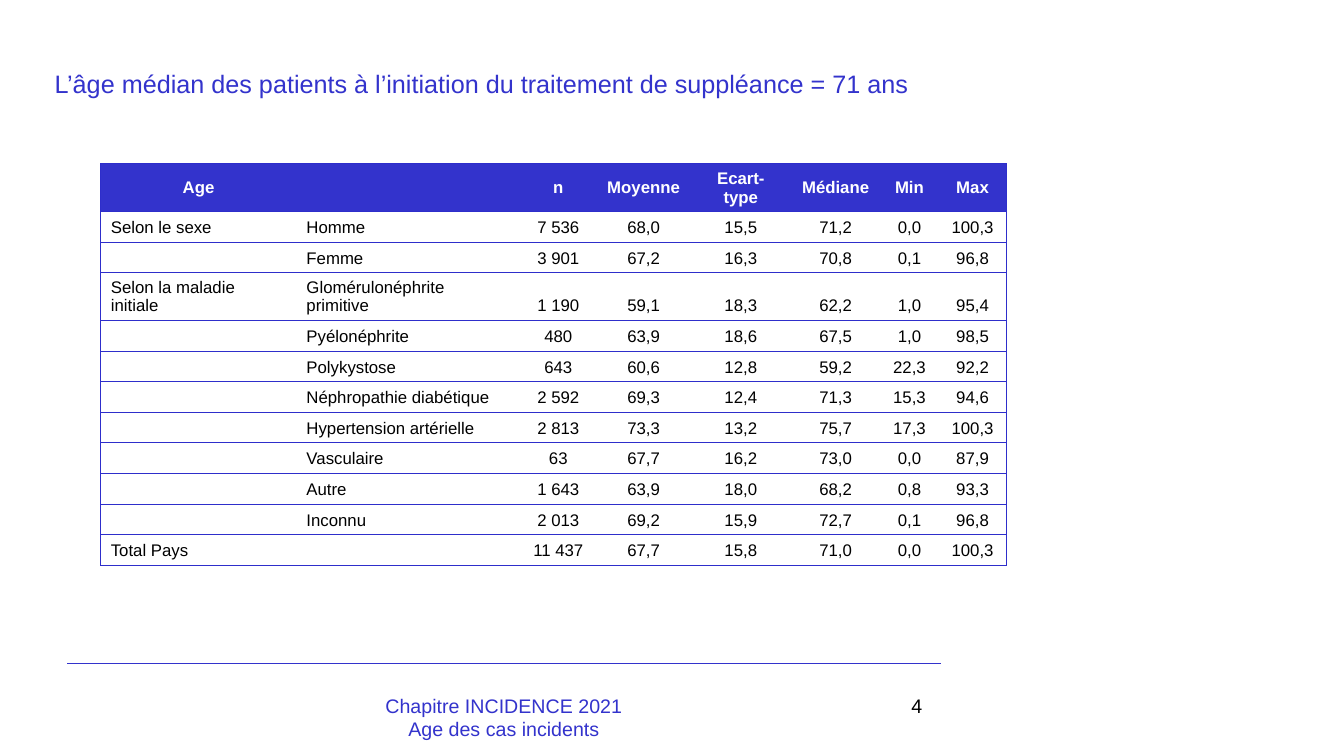
"""Build the slide on the age of incident patients: title, table and footer."""
from pptx import Presentation
from pptx.dml.color import RGBColor
from pptx.enum.shapes import MSO_CONNECTOR
from pptx.enum.text import MSO_ANCHOR, PP_ALIGN
from pptx.oxml import parse_xml
from pptx.oxml.ns import nsdecls
from pptx.util import Cm, Pt

BLUE = RGBColor(0x33, 0x33, 0xCC)
BORDER = RGBColor(0x2E, 0x2E, 0xCB)
WHITE = RGBColor(0xFF, 0xFF, 0xFF)
BLACK = RGBColor(0, 0, 0)
LEFT, CENTER, RIGHT = PP_ALIGN.LEFT, PP_ALIGN.CENTER, PP_ALIGN.RIGHT
JUSTIFY = PP_ALIGN.JUSTIFY
TOP, MIDDLE, BOTTOM = MSO_ANCHOR.TOP, MSO_ANCHOR.MIDDLE, MSO_ANCHOR.BOTTOM
STRAIGHT = MSO_CONNECTOR.STRAIGHT

COLUMN_WIDTHS = [4.93, 5.63, 1.94, 2.36, 2.54, 2.24, 1.48, 1.7]
ROW_HEIGHT = 0.77
ROWS = [
    ["Age", "", "n", "Moyenne", "Ecart-type", "Médiane", "Min", "Max"],
    ["Selon le sexe", "Homme", "7 536", "68,0", "15,5", "71,2", "0,0", "100,3"],
    ["", "Femme", "3 901", "67,2", "16,3", "70,8", "0,1", "96,8"],
    ["Selon la maladie initiale", "Glomérulonéphrite primitive",
     "1 190", "59,1", "18,3", "62,2", "1,0", "95,4"],
    ["", "Pyélonéphrite", "480", "63,9", "18,6", "67,5", "1,0", "98,5"],
    ["", "Polykystose", "643", "60,6", "12,8", "59,2", "22,3", "92,2"],
    ["", "Néphropathie diabétique", "2 592", "69,3", "12,4", "71,3", "15,3", "94,6"],
    ["", "Hypertension artérielle", "2 813", "73,3", "13,2", "75,7", "17,3", "100,3"],
    ["", "Vasculaire", "63", "67,7", "16,2", "73,0", "0,0", "87,9"],
    ["", "Autre", "1 643", "63,9", "18,0", "68,2", "0,8", "93,3"],
    ["", "Inconnu", "2 013", "69,2", "15,9", "72,7", "0,1", "96,8"],
    ["Total Pays", "", "11 437", "67,7", "15,8", "71,0", "0,0", "100,3"],
]


def write_text(text_frame, text, alignment, font_format):
    text_frame.text = text
    for paragraph in text_frame.paragraphs:
        paragraph.alignment = alignment
        for run in paragraph.runs:
            run.font.name = "Arial"
            run.font.color.rgb = font_format["color"]
            for name in ("size", "bold"):
                setattr(run.font, name, font_format[name])


def add_border(cell, side, visible):
    fill = f'<a:solidFill><a:srgbClr val="{BORDER}"/></a:solidFill>' if visible else "<a:noFill/>"
    cell_properties = cell._tc.get_or_add_tcPr()
    cell_properties.append(parse_xml(
        f'<a:ln{side} {nsdecls("a")} w="{Pt(0.75)}">{fill}</a:ln{side}>'))


presentation = Presentation()
presentation.slide_width, presentation.slide_height = Cm(33.87), Cm(19.05)
slide = presentation.slides.add_slide(presentation.slide_layouts[5])

title = slide.shapes.title
title_place = {"left": Cm(1.12), "top": Cm(1.6), "width": Cm(23.39), "height": Cm(1.02)}
for name, value in title_place.items():
    setattr(title, name, value)
title.text_frame.vertical_anchor = TOP
title.text_frame.word_wrap = True
write_text(title.text_frame,
           "L’âge médian des patients à l’initiation du traitement de suppléance = 71 ans",
           JUSTIFY, {"size": Pt(18), "bold": False, "color": BLUE})

table_frame = slide.shapes.add_table(
    len(ROWS), len(COLUMN_WIDTHS), Cm(2.54), Cm(4.13),
    Cm(sum(COLUMN_WIDTHS)), Cm(ROW_HEIGHT * len(ROWS)))
table = table_frame.table
for column, width in zip(table.columns, COLUMN_WIDTHS):
    column.width = Cm(width)
last_column = len(COLUMN_WIDTHS) - 1
header_format = {"size": Pt(12), "bold": True, "color": WHITE}
body_format = {"size": Pt(12), "bold": False, "color": BLACK}

for row_index, values in enumerate(ROWS):
    table.rows[row_index].height = Cm(ROW_HEIGHT)
    is_header = row_index == 0
    for column_index, value in enumerate(values):
        cell = table.cell(row_index, column_index)
        alignment = CENTER if is_header or column_index > 1 else LEFT
        write_text(cell.text_frame, value, alignment,
                   header_format if is_header else body_format)
        if not value:
            cell.text_frame.paragraphs[0]._p.append(
                parse_xml(f'<a:endParaRPr {nsdecls("a")} sz="1200"/>'))
        cell.vertical_anchor = MIDDLE if is_header else BOTTOM
        add_border(cell, "L", column_index == 0)
        add_border(cell, "R", column_index == last_column)
        add_border(cell, "T", True)
        add_border(cell, "B", True)
        if is_header:
            cell.fill.solid()
            cell.fill.fore_color.rgb = BLUE
        else:
            cell.fill.background()

footer_line = slide.shapes.add_connector(STRAIGHT, Cm(1.69), Cm(16.72), Cm(23.71), Cm(16.72))
footer_line.line.color.rgb = BLUE
footer_line.line.width = Pt(1)
footer_line._element.spPr.append(parse_xml(f'<a:effectLst {nsdecls("a")}/>'))

footers = [
    (8.68, 8.04, "Chapitre INCIDENCE 2021\nAge des cas incidents", CENTER, BLUE),
    (18.2, 5.29, "4", RIGHT, BLACK),
]
for left, width, text, alignment, color in footers:
    text_box = slide.shapes.add_textbox(Cm(left), Cm(17.36), Cm(width), Cm(1.27))
    text_box.text_frame.word_wrap = True
    write_text(text_box.text_frame, text, alignment,
               {"size": Pt(14), "bold": False, "color": color})

presentation.save("out.pptx")
